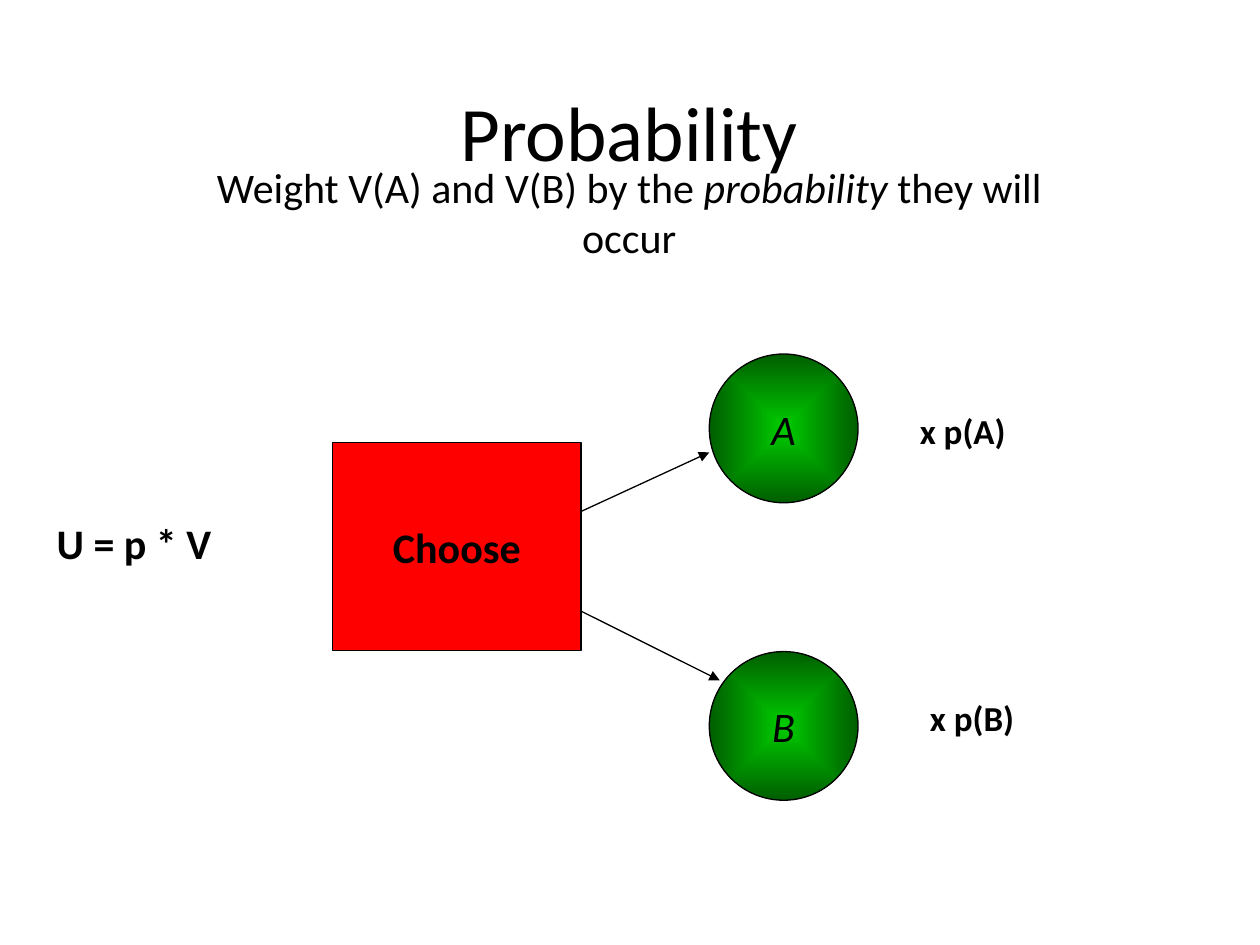
from lxml import etree
from pptx import Presentation
from pptx.dml.color import RGBColor
from pptx.enum.shapes import MSO_CONNECTOR, MSO_SHAPE
from pptx.enum.text import MSO_ANCHOR, MSO_AUTO_SIZE, PP_ALIGN
from pptx.oxml.ns import qn
from pptx.util import Pt

LEFT, CENTER = PP_ALIGN.LEFT, PP_ALIGN.CENTER
TOP, MIDDLE = MSO_ANCHOR.TOP, MSO_ANCHOR.MIDDLE
NO_FIT = MSO_AUTO_SIZE.NONE
RECTANGLE, OVAL = MSO_SHAPE.RECTANGLE, MSO_SHAPE.OVAL
STRAIGHT = MSO_CONNECTOR.STRAIGHT

FONT = "Calibri"
COLORS = {
    "ink": "000000",
    "choice": "FF0000",
    "outcome_center": "00CC00",
    "outcome_edge": "005E00",
}


def color(name):
    """Return the named colour."""
    return RGBColor.from_string(COLORS[name])


def write_text(shape, *parts, size=24, bold=False, align=LEFT, anchor=TOP, wrap=True):
    """Write one paragraph of (text, italic) parts into a shape."""
    frame = shape.text_frame
    frame.auto_size = NO_FIT
    frame.word_wrap = wrap
    frame.vertical_anchor = anchor
    para = frame.paragraphs[0]
    para.alignment = align
    for text, italic in parts:
        span = para.add_run()
        span.text = text
        span.font.name = FONT
        span.font.size = Pt(size)
        span.font.bold = bold
        span.font.italic = italic
        span.font.color.rgb = color("ink")


def add_text(page, box, *parts, **text_format):
    """Add a text box in the given (left, top, width, height) box."""
    shape = page.shapes.add_textbox(*map(Pt, box))
    write_text(shape, *parts, **text_format)


def set_outline(shape):
    """Give a shape or connector the thin black line."""
    shape.line.color.rgb = color("ink")
    shape.line.width = Pt(0.75)


def add_node(page, kind, box, label, **text_format):
    """Add an outlined shape with a centred label."""
    shape = page.shapes.add_shape(kind, *map(Pt, box))
    shape.shadow.inherit = False
    set_outline(shape)
    write_text(shape, label, align=CENTER, anchor=MIDDLE, wrap=False, **text_format)
    return shape


def fill_from_center(shape):
    """Fill a shape with a gradient that darkens from its centre outwards."""
    shape.fill.gradient()
    for stop, name in zip(shape.fill.gradient_stops, ("outcome_center", "outcome_edge")):
        stop.color.rgb = color(name)
    for position, stop in enumerate(shape.fill.gradient_stops):
        stop.position = position
    gradient = shape._element.spPr.find(qn("a:gradFill"))
    gradient.remove(gradient.find(qn("a:lin")))
    path = etree.SubElement(gradient, qn("a:path"), path="shape")
    etree.SubElement(path, qn("a:fillToRect"), l="50000", t="50000", r="50000", b="50000")


def add_arrow(page, start, end):
    """Add a thin arrow from start to end."""
    arrow = page.shapes.add_connector(STRAIGHT, *map(Pt, (*start, *end)))
    set_outline(arrow)
    etree.SubElement(arrow.line._get_or_add_ln(), qn("a:tailEnd"), type="triangle")
    etree.SubElement(arrow._element.spPr, qn("a:effectLst"))


def add_heading(page, box):
    """Place the title and the line below it."""
    left, top, width, height = box
    add_text(page, (left, top, width, 62.6), ("Probability", False),
             size=44, align=CENTER, anchor=MIDDLE)
    inset = 62.4
    add_text(page, (left + inset, top + 45.4, width - 2 * inset, height - 45.4),
             ("Weight V(A) and V(B) by the ", False), ("probability ", True),
             ("they will occur", False), align=CENTER)


def add_decision(page, box):
    """Place the formula, the choice and its two weighted outcomes."""
    left, top, width, height = box
    diameter = 85
    outcome_left = left + 380
    choice_left, choice_width = left + 164.9, 141.8
    choice_right = choice_left + choice_width
    outcomes = (
        ("A", top, (choice_right, top + 90), (outcome_left, top + 56.2),
         (left + 493.2, top + 28.1)),
        ("B", top + height - diameter, (choice_right, top + 146.9),
         (left + 386, top + 186.5), (left + 499, top + 192.2)),
    )
    for name, outcome_top, start, end, weight_corner in outcomes:
        circle = add_node(page, OVAL, (outcome_left, outcome_top, diameter, diameter),
                          (name, True))
        fill_from_center(circle)
        add_arrow(page, start, end)
        add_text(page, (*weight_corner, 108, 31), (f"x p({name})", False),
                 size=20, bold=True)
    choice = add_node(page, RECTANGLE, (choice_left, top + 50.4, choice_width, 119),
                      ("Choose", False), bold=True)
    choice.fill.solid()
    choice.fill.fore_color.rgb = color("choice")
    add_text(page, (left, top + 90, 136, 36), ("U = p * V", False), bold=True)


def main():
    """Build the slide and save it."""
    deck = Presentation()
    deck.slide_width, deck.slide_height = Pt(720), Pt(540)
    page = deck.slides.add_slide(deck.slide_layouts[6])
    add_heading(page, (25.3, 43.2, 668.6, 110.2))
    add_decision(page, (25.3, 202.3, 607, 255))
    deck.save("out.pptx")


if __name__ == "__main__":
    main()
